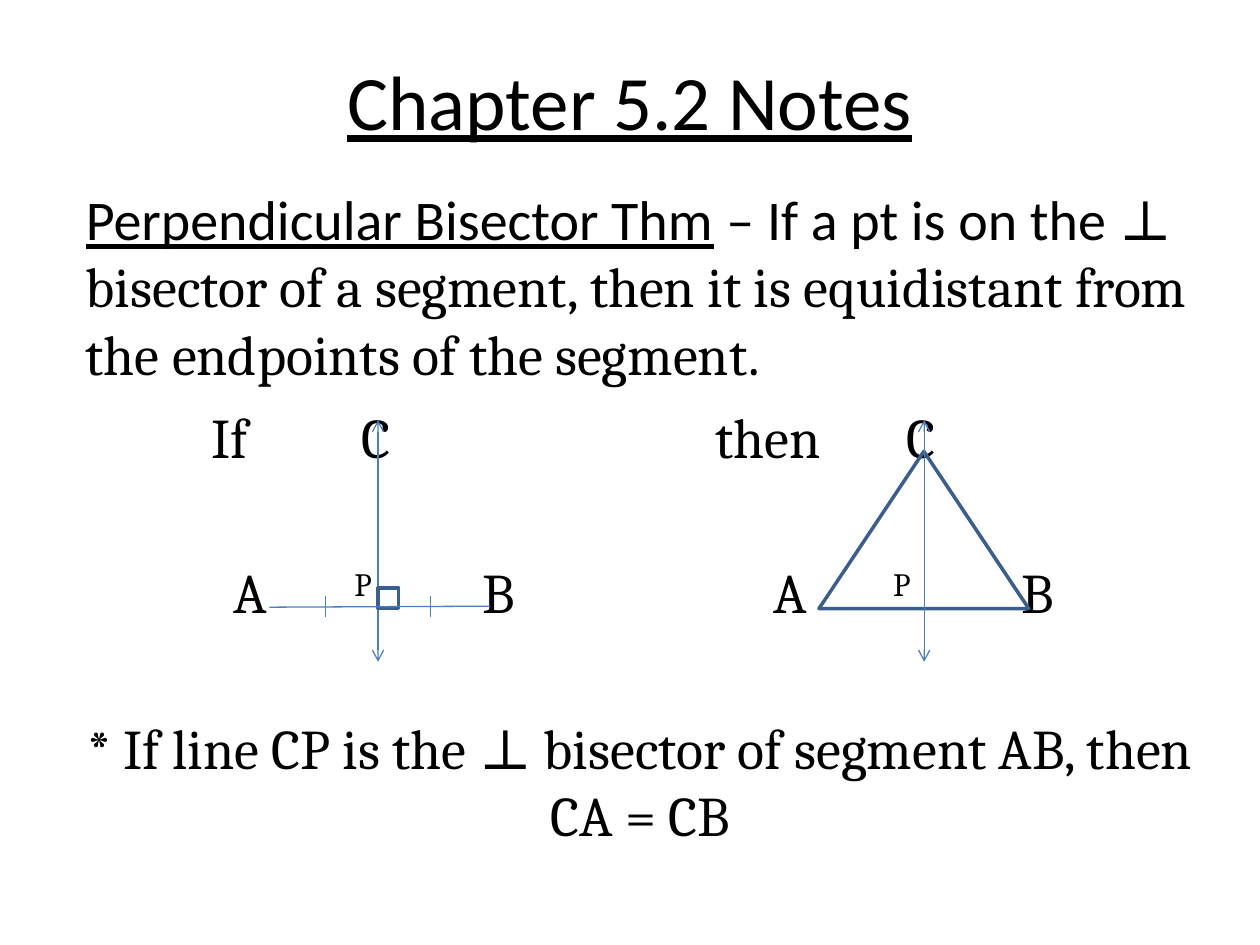
from lxml import etree
from pptx import Presentation
from pptx.dml.color import RGBColor
from pptx.enum.shapes import MSO_CONNECTOR, MSO_SHAPE
from pptx.enum.text import MSO_ANCHOR, PP_ALIGN
from pptx.oxml.ns import qn
from pptx.util import Cm, Pt

BLACK = RGBColor(0x00, 0x00, 0x00)
OUTLINE_BLUE = RGBColor(0x3A, 0x5F, 0x8C)
LINE_BLUE = RGBColor(0x4B, 0x7E, 0xBC)
STRAIGHT = MSO_CONNECTOR.STRAIGHT
TRIANGLE = MSO_SHAPE.ISOSCELES_TRIANGLE
RECTANGLE = MSO_SHAPE.RECTANGLE
LEFT, CENTER = PP_ALIGN.LEFT, PP_ALIGN.CENTER
TOP, MIDDLE = MSO_ANCHOR.TOP, MSO_ANCHOR.MIDDLE

TITLE = {"name": "Calibri", "size": Pt(44), "underline": True}
TERM = {"name": "Calibri", "size": Pt(32), "underline": True}
LEAD = {"name": "Calibri", "size": Pt(32)}
BODY = {"name": "Cambria", "size": Pt(32)}
SUPERSCRIPT = "30000"

LABEL_WIDTH, LABEL_HEIGHT = 3, 1.6
CAPTION_TOP, SEGMENT_TOP = 7.98, 11.12
LINE_TOP, LINE_BOTTOM = 8.47, 13.34
BISECTOR_X, TRIANGLE_X = 7.62, 18.63
TICK_OFFSET = 1.06


class SlideBuilder:
    def __init__(self, slide):
        self.slide = slide

    def text(self, left, top, width, height, runs, align=LEFT, anchor=TOP, baseline=None):
        frame = self.slide.shapes.add_textbox(
            Cm(left), Cm(top), Cm(width), Cm(height)).text_frame
        frame.word_wrap = True
        frame.vertical_anchor = anchor
        paragraph = frame.paragraphs[0]
        paragraph.alignment = align
        for content, style in runs:
            run = paragraph.add_run()
            run.text = content
            run.font.color.rgb = BLACK
            for name, value in style.items():
                setattr(run.font, name, value)
            if baseline:
                run._r.get_or_add_rPr().set("baseline", baseline)

    def label(self, content, center, top, baseline=None):
        self.text(center - LABEL_WIDTH / 2, top, LABEL_WIDTH, LABEL_HEIGHT,
                  [(content, BODY)], CENTER, baseline=baseline)

    def outline(self, kind, left, top, width, height):
        shape = self.slide.shapes.add_shape(
            kind, Cm(left), Cm(top), Cm(width), Cm(height))
        shape.shadow.inherit = False
        shape.fill.background()
        shape.line.color.rgb = OUTLINE_BLUE
        shape.line.width = Pt(2)

    def line(self, start_x, start_y, end_x, end_y, arrows=False):
        connector = self.slide.shapes.add_connector(
            STRAIGHT, Cm(start_x), Cm(start_y), Cm(end_x), Cm(end_y))
        connector.line.color.rgb = LINE_BLUE
        connector.line.width = Pt(0.75)
        if arrows:
            for end in ("a:headEnd", "a:tailEnd"):
                etree.SubElement(connector.line._get_or_add_ln(), qn(end), type="arrow")
        etree.SubElement(connector._element.spPr, qn("a:effectLst"))


def main():
    presentation = Presentation()
    presentation.slide_width = Cm(25.4)
    presentation.slide_height = Cm(19.05)
    builder = SlideBuilder(presentation.slides.add_slide(presentation.slide_layouts[6]))

    builder.text(1.9, 0.85, 21.6, 2.33, [("Chapter 5.2 Notes", TITLE)], CENTER, MIDDLE)
    builder.text(1.48, 3.6, 22.86, 4.3, [
        ("Perpendicular Bisector Thm", TERM),
        (" – If a pt is on the ", LEAD),
        ("⊥ bisector of a segment, then it is equidistant from "
         "the endpoints of the segment.", BODY),
    ])
    builder.text(1.48, 14.25, 22.86, 3, [
        ("* If line CP is the ⊥ bisector of segment AB, then CA = CB", BODY),
    ], CENTER)

    for content, center in (("If", 4.64), ("C", 7.58), ("then", 15.48), ("C", 18.57)):
        builder.label(content, center, CAPTION_TOP)
    for content, center in (("A", 5.04), ("B", 10.06), ("A", 15.93), ("B", 20.93)):
        builder.label(content, center, SEGMENT_TOP)
    for center in (7.32, 18.18):
        builder.label("P", center, SEGMENT_TOP, SUPERSCRIPT)

    builder.outline(TRIANGLE, 16.51, 9.1, 4.23, 3.17)
    for x in (BISECTOR_X, TRIANGLE_X):
        builder.line(x, LINE_TOP, x, LINE_BOTTOM, arrows=True)
    builder.outline(RECTANGLE, BISECTOR_X, 11.85, 0.42, 0.42)
    for x in (BISECTOR_X - TICK_OFFSET, BISECTOR_X + TICK_OFFSET):
        builder.line(x, 12.01, x, 12.44)
    builder.line(5.43, 12.24, 9.88, 12.22)

    presentation.save("out.pptx")


if __name__ == "__main__":
    main()
